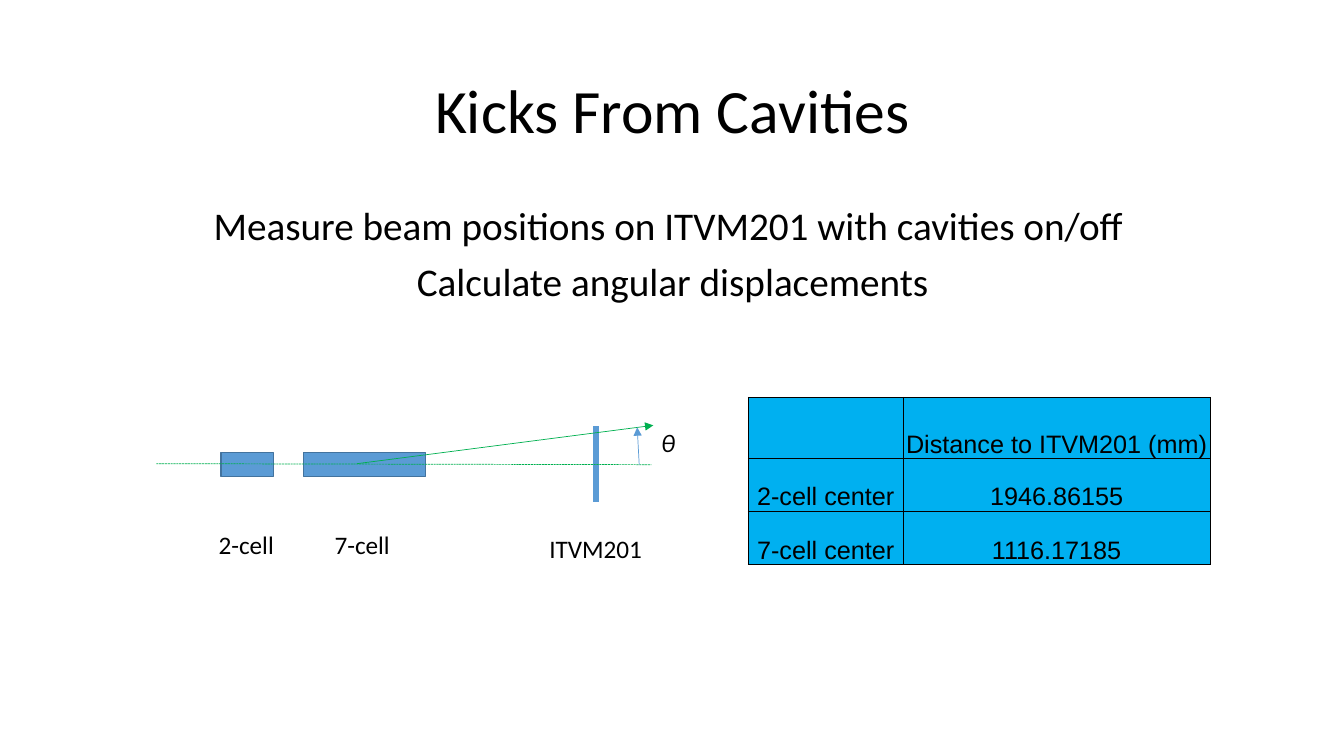
from dataclasses import dataclass

from lxml.etree import SubElement
from pptx import Presentation
from pptx.dml.color import RGBColor as Color
from pptx.enum.dml import MSO_LINE_DASH_STYLE as Dash
from pptx.enum.shapes import MSO_CONNECTOR as Connector, MSO_SHAPE as Shape
from pptx.enum.text import MSO_ANCHOR as Anchor, MSO_AUTO_SIZE as AutoSize, PP_ALIGN as Align
from pptx.oxml.ns import qn
from pptx.util import Emu, Pt

EMU_PER_PX = 9144


@dataclass(frozen=True)
class Theme:
    text: Color = Color.from_string("000000")
    device: Color = Color.from_string("5B9BD5")
    device_edge: Color = Color.from_string("43739E")
    beam: Color = Color.from_string("00B050")
    cell: Color = Color.from_string("00B0F0")
    font: str = "Calibri"
    table_font: str = "Arial"
    title_size: int = 44
    body_size: int = 28
    label_size: int = 18


THEME = Theme()


def px(*lengths):
    return [Emu(length * EMU_PER_PX) for length in lengths]


def apply(target, values):
    for name, value in values.items():
        setattr(target, name, value)


def add_span(para, text, size, name=THEME.font, italic=None):
    span = para.add_run()
    span.text = text
    apply(span.font, {"size": Pt(size), "name": name, "italic": italic})
    span.font.color.rgb = THEME.text


def fill_placeholder(holder, bounds, lines, size, anchor, space_before):
    apply(holder, dict(zip(("left", "top", "width", "height"), px(*bounds))))
    frame = holder.text_frame
    apply(frame, {"auto_size": AutoSize.NONE, "vertical_anchor": anchor, "word_wrap": True})
    for index, line in enumerate(lines):
        para = frame.add_paragraph() if index else frame.paragraphs[0]
        apply(para, {"alignment": Align.CENTER, "line_spacing": 0.9,
                     "space_before": Pt(space_before if index else 0)})
        properties = para._p.get_or_add_pPr()
        apply_indent = {"marL": "0", "indent": "0"}
        for name, value in apply_indent.items():
            properties.set(name, value)
        SubElement(properties, qn("a:buNone"))
        add_span(para, line, size)


def add_cavity(page, *bounds):
    cavity = page.shapes.add_shape(Shape.RECTANGLE, *px(*bounds))
    cavity.shadow.inherit = False
    cavity.fill.solid()
    cavity.fill.fore_color.rgb = THEME.device
    cavity.line.color.rgb = THEME.device_edge
    cavity.line.width = Pt(1)


def add_line(page, ends, color, width=0.5, dash=None, arrow=False):
    connector = page.shapes.add_connector(Connector.STRAIGHT, *px(*ends))
    connector.line.color.rgb = color
    apply(connector.line, {"width": Pt(width), "dash_style": dash})
    if arrow:
        SubElement(connector.line._get_or_add_ln(), qn("a:tailEnd"), type="triangle")
    SubElement(connector._element.spPr, qn("a:effectLst"))


def add_label(page, text, bounds, italic=None):
    frame = page.shapes.add_textbox(*px(*bounds)).text_frame
    apply(frame, {"word_wrap": False, "auto_size": AutoSize.SHAPE_TO_FIT_TEXT})
    add_span(frame.paragraphs[0], text, THEME.label_size, italic=italic)


def add_cell_borders(cell):
    """Outline the cell; borders must precede the fill in the cell properties."""
    properties = cell._tc.get_or_add_tcPr()
    for side in ("lnL", "lnR", "lnT", "lnB"):
        border = SubElement(properties, qn(f"a:{side}"), w=str(Pt(0.5)))
        fill = SubElement(border, qn("a:solidFill"))
        SubElement(fill, qn("a:srgbClr"), val=str(THEME.text))


def add_distance_table(page, left, top, widths, heights, rows):
    bounds = px(left, top, sum(widths), sum(heights))
    table = page.shapes.add_table(len(rows), len(widths), *bounds).table
    apply(table, {"first_row": False, "horz_banding": False})
    for column, width in zip(table.columns, px(*widths)):
        column.width = width
    for row, height, texts in zip(table.rows, px(*heights), rows):
        row.height = height
        for cell, text in zip(row.cells, texts):
            margins = dict(zip(("margin_left", "margin_right", "margin_top", "margin_bottom"),
                               px(1, 1, 1, 0)))
            apply(cell, {"vertical_anchor": Anchor.BOTTOM, **margins})
            add_cell_borders(cell)
            cell.fill.solid()
            cell.fill.fore_color.rgb = THEME.cell
            if text:
                para = cell.text_frame.paragraphs[0]
                para.alignment = Align.CENTER
                add_span(para, text, THEME.label_size, THEME.table_font)


def add_beamline(page):
    add_cavity(page, 219, 449, 52, 24)
    add_cavity(page, 301, 449, 121, 24)
    add_line(page, (591, 423, 591, 498), THEME.device, width=4.5)
    add_line(page, (155, 460, 646, 461), THEME.beam, dash=Dash.SQUARE_DOT)
    add_line(page, (354, 460, 648, 422), THEME.beam, arrow=True)
    add_line(page, (634, 461, 632, 424), THEME.device, arrow=True)
    add_label(page, "2-cell", (207, 520, 76, 40))
    add_label(page, "7-cell", (322, 520, 76, 40))
    add_label(page, "ITVM201", (535, 524, 113, 40))
    add_label(page, "θ", (646, 419, 34, 40), italic=True)


def main():
    deck = Presentation()
    deck.slide_width, deck.slide_height = px(1333, 750)
    page = deck.slides.add_slide(deck.slide_layouts[1])
    title, body = page.placeholders
    fill_placeholder(title, (92, 40, 1150, 145), ["Kicks From Cavities"],
                     THEME.title_size, Anchor.MIDDLE, 0)
    fill_placeholder(body, (92, 200, 1150, 476),
                     ["Measure beam positions on ITVM201 with cavities on/off ",
                      "Calculate angular displacements"],
                     THEME.body_size, Anchor.TOP, 10)
    add_beamline(page)
    add_distance_table(page, 742, 394, (154, 304), (61, 52, 53),
                       [("", "Distance to ITVM201 (mm)"),
                        ("2-cell center", "1946.86155"),
                        ("7-cell center", "1116.17185")])
    deck.save("out.pptx")


if __name__ == "__main__":
    main()
